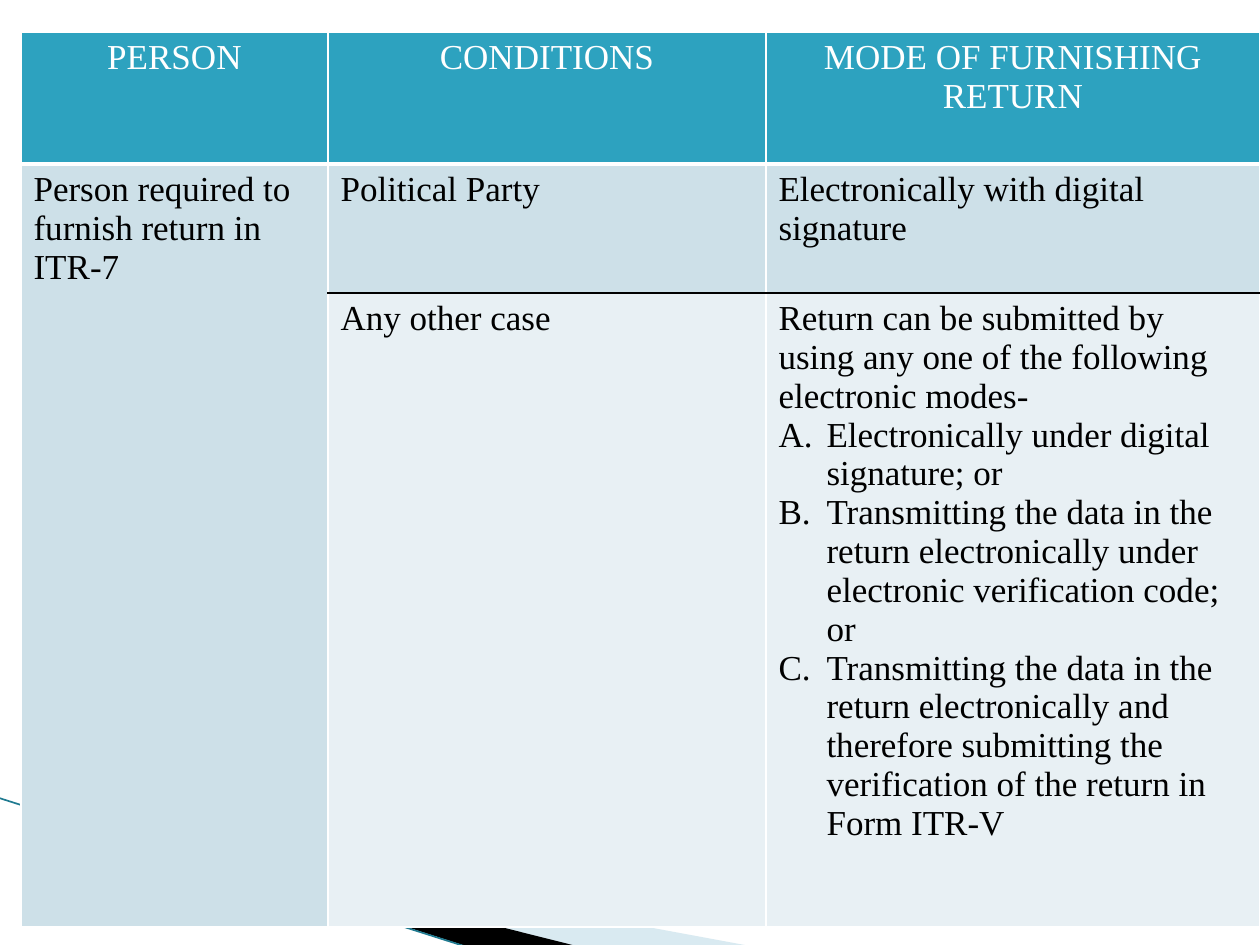
import pptx
import pptx.dml.color
import pptx.enum.text
import pptx.oxml
import pptx.oxml.ns
import pptx.util
from lxml import etree

COLORS = {
    "white": "FFFFFF", "black": "000000", "header": "2DA2BF",
    "band1": "CDE0E8", "band2": "E8F0F4", "wedge": "A0CBDC", "edge": "1F7A90",
}
HEADERS = ["PERSON", "CONDITIONS", "MODE OF FURNISHING RETURN"]
PERSON = "Person required to furnish return in ITR-7"
MODES_INTRO = "Return can be submitted by using any one of the following electronic modes-"
MODES = [
    "Electronically under digital signature; or",
    "Transmitting the data in the return electronically under electronic verification code; or",
    "Transmitting the data in the return electronically and therefore submitting "
    "the verification of the return in Form ITR-V",
]
COLS = [307, 438, 494]
ROWS = [132, 129, 634]


def px(n):
    return pptx.util.Emu(round(n * 914400 / 126))


def rgb(name):
    return pptx.dml.color.RGBColor.from_string(COLORS[name])


def sub(parent, tag, **attrs):
    return etree.SubElement(parent, pptx.oxml.ns.qn(tag), **attrs)


class Deck:
    font, size = "Times New Roman", 20

    def __init__(self, prs):
        self.s = prs.slides.add_slide(prs.slide_layouts[6])

    def freeform(self, points, color, alpha=None):
        fb = self.s.shapes.build_freeform(*points[0], scale=px(1))
        fb.add_line_segments(points[1:], close=True)
        sp = fb.convert_to_shape()
        sp.shadow.inherit = False
        sp.fill.solid()
        sp.fill.fore_color.rgb = rgb(color)
        sp.line.fill.background()
        if alpha:
            clr = sp.fill._xPr.find(".//" + pptx.oxml.ns.qn("a:srgbClr"))
            sub(clr, "a:alpha", val=str(alpha * 1000))

    def line(self, x1, y1, x2, y2, color, width):
        c = self.s.shapes.add_connector(1, px(x1), px(y1), px(x2), px(y2))
        c.line.color.rgb = rgb(color)
        c.line.width = pptx.util.Pt(width)
        sub(c._element.spPr, "a:effectLst")

    def table(self, x, y, cols, rows):
        shape = self.s.shapes.add_table(
            len(rows), len(cols), px(x), px(y), px(sum(cols)), px(sum(rows)))
        for col, w in zip(shape.table.columns, cols):
            col.width = px(w)
        for row, h in zip(shape.table.rows, rows):
            row.height = px(h)
        return shape.table

    def cell(self, cell, fill, top="white", bottom="white", bottom_width=1):
        cell.fill.solid()
        cell.fill.fore_color.rgb = rgb(fill)
        tcPr = cell._tc.get_or_add_tcPr()
        sides = [("L", "white", 1), ("R", "white", 1), ("T", top, 1), ("B", bottom, bottom_width)]
        for i, (side, color, width) in enumerate(sides):
            ln = sub(tcPr, "a:ln" + side, w=str(int(width * 12700)))
            sub(sub(ln, "a:solidFill"), "a:srgbClr", val=COLORS[color])
            tcPr.insert(i, ln)  # borders precede the fill

    def text(self, cell, paragraphs, color="black", center=False, lettered_from=None):
        """Fill a cell; paragraphs from index lettered_from on get A. B. C. numbering."""
        tf = cell.text_frame
        for i, content in enumerate(paragraphs):
            p = tf.paragraphs[0] if i == 0 else tf.add_paragraph()
            if center:
                p.alignment = pptx.enum.text.PP_ALIGN.CENTER
            if lettered_from is not None and i >= lettered_from:
                pPr = p._p.get_or_add_pPr()
                indent = px(48)
                pPr.set("marL", str(indent))
                pPr.set("indent", str(-indent))
                sub(pPr, "a:buFont", typeface="+mj-lt")
                sub(pPr, "a:buAutoNum", type="alphaUcPeriod")
            r = p.add_run()
            r.text = content
            r.font.name = self.font
            r.font.size = pptx.util.Pt(self.size)
            r.font.color.rgb = rgb(color)


def main():
    prs = pptx.Presentation()
    prs.slide_width, prs.slide_height = px(1260), px(945)
    d = Deck(prs)

    d.freeform([(69, 820), (750, 946), (575, 946), (69, 819)], "wedge", alpha=40)
    d.freeform([(67, 818), (576, 946), (469, 947), (68, 819)], "black")
    d.line(-1, 798, 467, 947, "edge", 0.95)

    t = d.table(21, 32, COLS, ROWS)
    for col, title in enumerate(HEADERS):
        d.cell(t.cell(0, col), "header", bottom_width=3)
        d.text(t.cell(0, col), [title], "white", center=True)

    t.cell(1, 0).merge(t.cell(2, 0))
    for row in (1, 2):
        d.cell(t.cell(row, 0), "band1")
    d.text(t.cell(1, 0), [PERSON])

    for col in (1, 2):
        d.cell(t.cell(1, col), "band1", bottom="black")
        d.cell(t.cell(2, col), "band2", top="black")
    d.text(t.cell(1, 1), ["Political Party"])
    d.text(t.cell(1, 2), ["Electronically with digital signature"])
    d.text(t.cell(2, 1), ["Any other case"])
    d.text(t.cell(2, 2), [MODES_INTRO] + MODES, lettered_from=1)

    prs.save("out.pptx")


if __name__ == "__main__":
    main()
